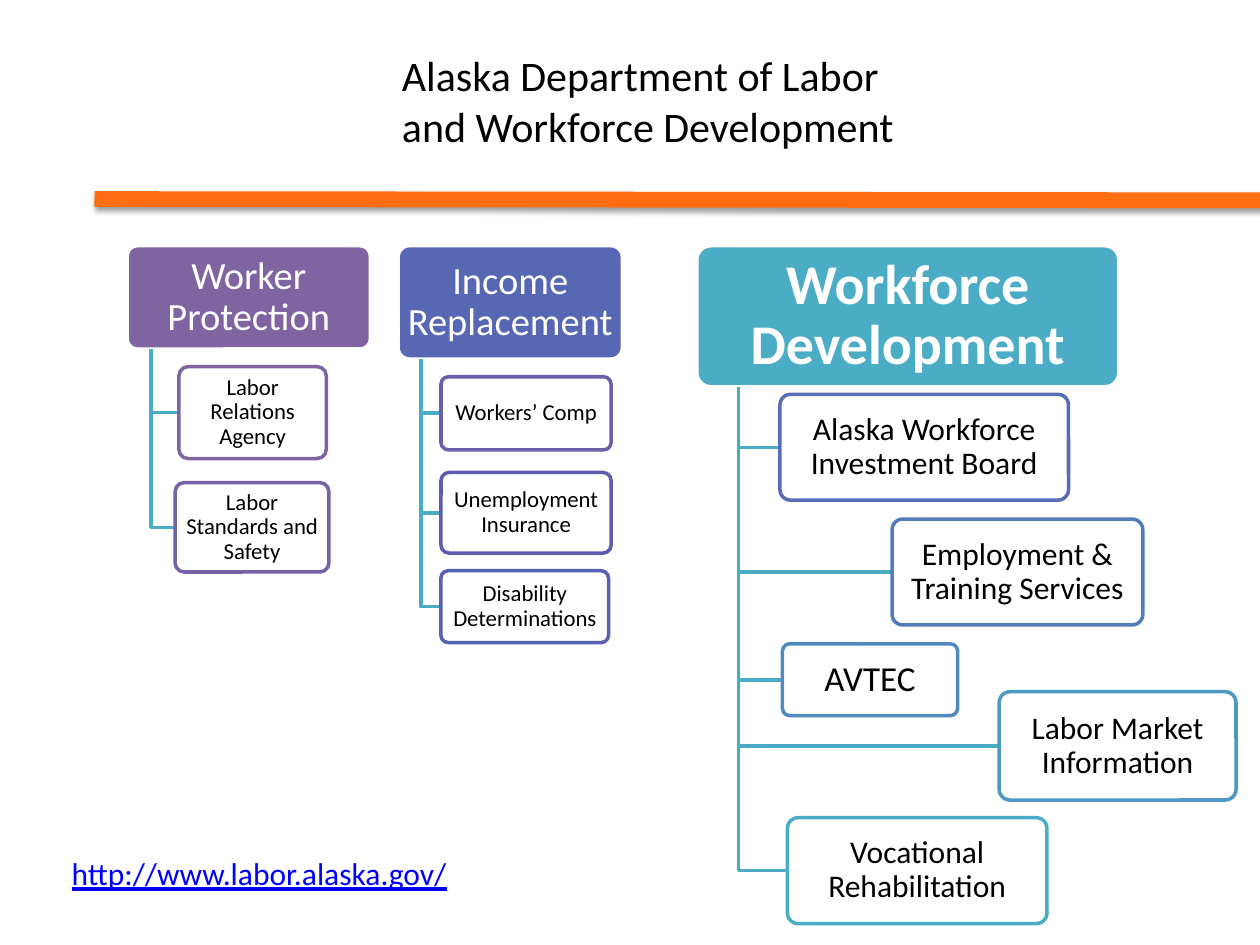
from dataclasses import dataclass

from lxml.etree import SubElement
from pptx import Presentation
from pptx.dml.color import RGBColor
from pptx.enum.shapes import MSO_CONNECTOR, MSO_SHAPE
from pptx.enum.text import MSO_ANCHOR, MSO_AUTO_SIZE, PP_ALIGN
from pptx.oxml import parse_xml
from pptx.oxml.ns import nsdecls, qn
from pptx.util import Inches, Pt


@dataclass(frozen=True)
class Theme:
    font: str = "Calibri"
    black: str = "000000"
    white: str = "FFFFFF"
    link: str = "0000FF"
    rule: str = "FF6D13"
    branch: str = "4BACC6"
    title_size: int = 24
    link_size: int = 18
    header_size: int = 22
    main_header_size: int = 32
    small_size: int = 13
    medium_size: int = 18
    large_size: int = 20
    line_width: int = 2
    rule_width: int = 9
    box_opacity: int = 90


@dataclass
class Box:
    text: str
    left: float
    top: float
    width: float
    height: float
    color: str
    size: int
    margins: tuple
    bold: bool = False


class ChartSlide:
    def __init__(self, slide, theme):
        self.slide = slide
        self.theme = theme

    def add_run(self, paragraph, text, size, color, bold=False, underline=False):
        run = paragraph.add_run()
        run.text = text
        font = run.font
        font.name = self.theme.font
        font.size = Pt(size)
        font.bold = bold
        font.underline = underline
        font.color.rgb = RGBColor.from_string(color)

    def set_line(self, line, color, width):
        line.color.rgb = RGBColor.from_string(color)
        line.width = Pt(width)

    def title(self, lines, left, top, width, height):
        title = self.slide.shapes.title
        title.left, title.top = Inches(left), Inches(top)
        title.width, title.height = Inches(width), Inches(height)
        frame = title.text_frame
        frame.word_wrap = True
        frame.vertical_anchor = MSO_ANCHOR.MIDDLE
        for index, text in enumerate(lines):
            paragraph = frame.add_paragraph() if index else frame.paragraphs[0]
            paragraph.alignment = PP_ALIGN.LEFT
            self.add_run(paragraph, text, self.theme.title_size, self.theme.black)

    def rule(self, left, top, right, bottom):
        connector = self.slide.shapes.add_connector(
            MSO_CONNECTOR.STRAIGHT, Inches(left), Inches(top), Inches(right), Inches(bottom))
        self.set_line(connector.line, self.theme.rule, self.theme.rule_width)
        connector._element.spPr.append(parse_xml(
            f'<a:effectLst {nsdecls("a")}>'
            f'<a:outerShdw blurRad="{Pt(3.1)}" dist="{Pt(1.6)}" dir="5400000" rotWithShape="0">'
            f'<a:srgbClr val="{self.theme.black}"><a:alpha val="38000"/></a:srgbClr>'
            '</a:outerShdw></a:effectLst>'))

    def link_text(self, text, left, top, width, height):
        shape = self.slide.shapes.add_textbox(
            Inches(left), Inches(top), Inches(width), Inches(height))
        frame = shape.text_frame
        frame.word_wrap = False
        frame.auto_size = MSO_AUTO_SIZE.SHAPE_TO_FIT_TEXT
        self.add_run(frame.paragraphs[0], text, self.theme.link_size,
                     self.theme.link, underline=True)

    def box(self, box, fill, line, text_color, opacity=100):
        shape = self.slide.shapes.add_shape(
            MSO_SHAPE.ROUNDED_RECTANGLE, Inches(box.left), Inches(box.top),
            Inches(box.width), Inches(box.height))
        shape.adjustments[0] = 0.1
        shape.shadow.inherit = False
        shape.fill.solid()
        shape.fill.fore_color.rgb = RGBColor.from_string(fill)
        if opacity < 100:
            color = shape._element.spPr.find(qn("a:solidFill"))[0]
            SubElement(color, qn("a:alpha")).set("val", str(opacity * 1000))
        self.set_line(shape.line, line, self.theme.line_width)
        frame = shape.text_frame
        frame.word_wrap = True
        frame.vertical_anchor = MSO_ANCHOR.MIDDLE
        side, end = box.margins
        frame.margin_left = frame.margin_right = Inches(side)
        frame.margin_top = frame.margin_bottom = Inches(end)
        paragraph = frame.paragraphs[0]
        paragraph.alignment = PP_ALIGN.CENTER
        paragraph.line_spacing = 0.9
        self.add_run(paragraph, box.text, box.size, text_color, box.bold)

    def elbow(self, trunk, top, right, bottom):
        builder = self.slide.shapes.build_freeform(Inches(trunk), Inches(top))
        builder.add_line_segments(
            [(Inches(trunk), Inches(bottom)), (Inches(right), Inches(bottom))], close=False)
        shape = builder.convert_to_shape()
        shape.fill.background()
        shape.shadow.inherit = False
        self.set_line(shape.line, self.theme.branch, self.theme.line_width)

    def division(self, header, trunk, children):
        theme = self.theme
        self.box(header, header.color, theme.white, theme.white)
        for child in children:
            self.elbow(trunk, header.top + header.height,
                       child.left, child.top + child.height / 2)
            self.box(child, theme.white, child.color, theme.black, theme.box_opacity)


def main():
    presentation = Presentation()
    presentation.slide_width, presentation.slide_height = Inches(10), Inches(7.5)
    theme = Theme()
    chart = ChartSlide(presentation.slides.add_slide(presentation.slide_layouts[5]), theme)

    chart.rule(0.75, 1.58, 10.1, 1.59)
    chart.link_text("http://www.labor.alaska.gov/", 0.47, 6.73, 3.21, 0.4)
    chart.title(["Alaska Department of Labor", "and Workforce Development"],
                3.09, 0.17, 4.33, 1.25)

    header_top = 1.95
    header_margins = (0.05, 0.03)
    small = (theme.small_size, (0.03, 0.02))
    medium = (theme.medium_size, (0.04, 0.03))
    large = (theme.large_size, (0.04, 0.03))
    divisions = [
        (Box("Worker Protection", 1.01, header_top, 1.93, 0.82, "8064A2",
             theme.header_size, header_margins), 1.2, [
            Box("Labor Relations Agency", 1.42, 2.91, 1.17, 0.73, "8064A2", *small),
            Box("Labor Standards and Safety", 1.39, 3.83, 1.22, 0.71, "7761A6", *small),
        ]),
        (Box("Income Replacement", 3.16, header_top, 1.78, 0.9, "5767B4",
             theme.header_size, header_margins), 3.34, [
            Box("Workers’ Comp", 3.5, 2.99, 1.35, 0.58, "6C5EAA", *small),
            Box("Unemployment Insurance", 3.5, 3.75, 1.35, 0.64, "5F5BAE", *small),
            Box("Disability Determinations", 3.5, 4.53, 1.33, 0.57, "5961B2", *small),
        ]),
        (Box("Workforce Development", 5.53, header_top, 3.35, 1.12, "4BACC6",
             theme.main_header_size, (0.07, 0.04), True), 5.86, [
            Box("Alaska Workforce Investment Board", 6.19, 3.13, 2.29, 0.84, "566DB6", *medium),
            Box("Employment & Training Services", 7.08, 4.12, 1.99, 0.84, "537ABA", *medium),
            Box("AVTEC", 6.21, 5.11, 1.39, 0.57, "5089BE", *large),
            Box("Labor Market Information", 7.93, 5.49, 1.88, 0.86, "4E99C2", *medium),
            Box("Vocational Rehabilitation", 6.25, 6.49, 2.06, 0.84, "4BACC6", *medium),
        ]),
    ]
    for header, trunk, children in divisions:
        chart.division(header, trunk, children)

    presentation.save("out.pptx")


if __name__ == "__main__":
    main()
